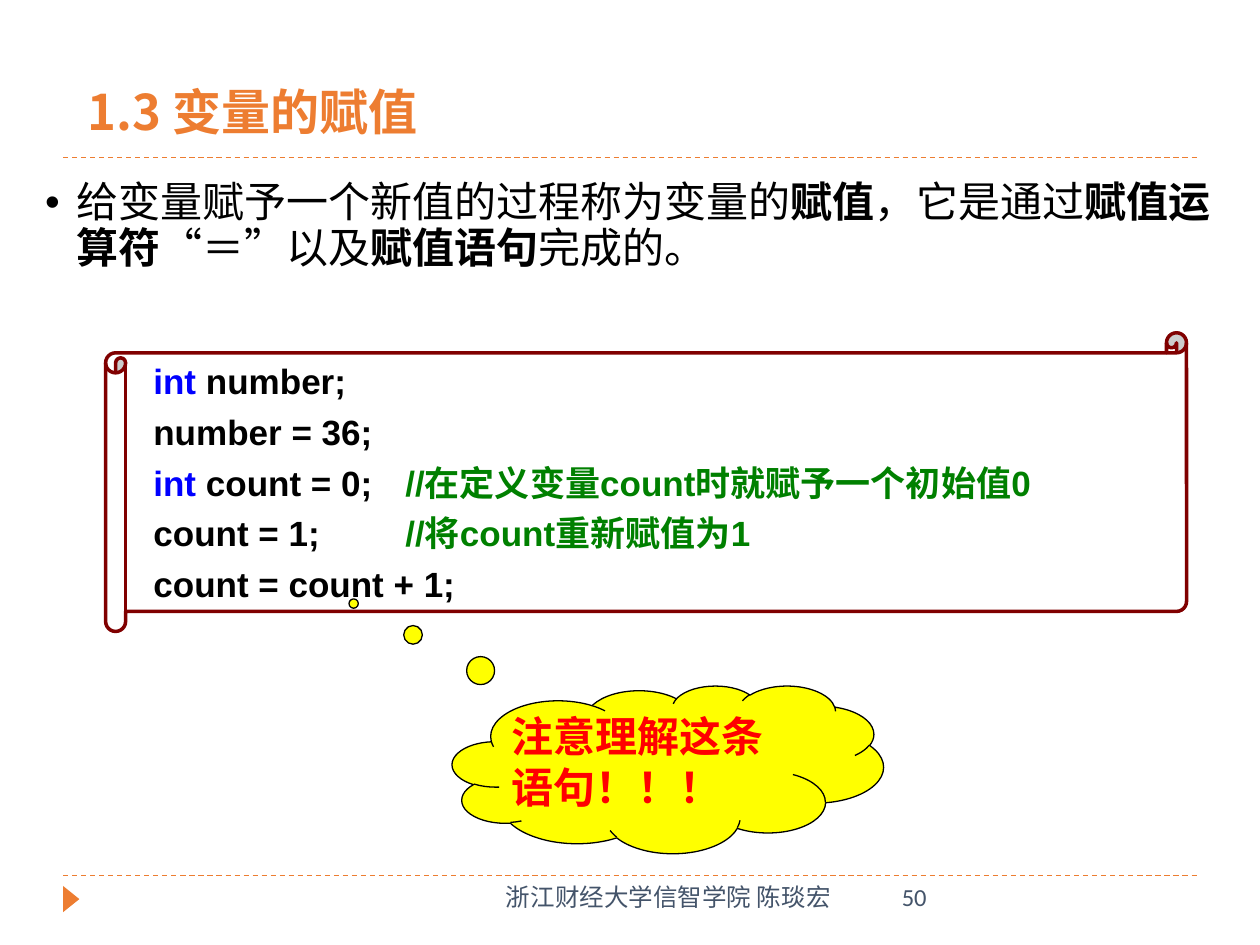
from lxml import etree
from pptx import Presentation
from pptx.dml.color import RGBColor
from pptx.enum.dml import MSO_LINE
from pptx.enum.lang import MSO_LANGUAGE_ID
from pptx.enum.shapes import MSO_CONNECTOR, MSO_SHAPE
from pptx.enum.text import MSO_ANCHOR, PP_ALIGN
from pptx.oxml.ns import qn
from pptx.util import Cm, Pt

STRAIGHT = MSO_CONNECTOR.STRAIGHT
SCROLL, CLOUD = MSO_SHAPE.HORIZONTAL_SCROLL, MSO_SHAPE.CLOUD_CALLOUT
TRIANGLE = MSO_SHAPE.ISOSCELES_TRIANGLE
TOP, MIDDLE, BOTTOM = MSO_ANCHOR.TOP, MSO_ANCHOR.MIDDLE, MSO_ANCHOR.BOTTOM
LEFT, RIGHT = PP_ALIGN.LEFT, PP_ALIGN.RIGHT
DASH = MSO_LINE.DASH
CHINESE = MSO_LANGUAGE_ID.SIMPLIFIED_CHINESE

ORANGE = RGBColor(0xED, 0x7D, 0x31)
SLATE = RGBColor(0x44, 0x54, 0x6A)
BLACK = RGBColor(0, 0, 0)
WHITE = RGBColor(0xFF, 0xFF, 0xFF)
MAROON = RGBColor(0x80, 0, 0)
BLUE = RGBColor(0, 0, 0xFF)
GREEN = RGBColor(0, 0x80, 0)
YELLOW = RGBColor(0xFF, 0xFF, 0)
RED = RGBColor(0xFF, 0, 0)


def add_run(paragraph, text, **formats):
    run = paragraph.add_run()
    run.text = text
    run.font.language_id = CHINESE
    color = formats.pop("color")
    for name, value in formats.items():
        setattr(run.font, name, value)
    run.font.color.rgb = color


def set_frame(shape, anchor, left=0.25, top=0.13, right=0.25, bottom=0.13):
    frame = shape.text_frame
    formats = {"word_wrap": True, "vertical_anchor": anchor,
               "margin_left": Cm(left), "margin_top": Cm(top),
               "margin_right": Cm(right), "margin_bottom": Cm(bottom)}
    for name, value in formats.items():
        setattr(frame, name, value)
    return frame.paragraphs[0]


presentation = Presentation()
presentation.slide_width, presentation.slide_height = Cm(25.4), Cm(19.05)
slide = presentation.slides.add_slide(presentation.slide_layouts[1])
shapes = slide.shapes

# Dashed rules above and below the content
for y in (17.65, 3.18):
    rule = shapes.add_connector(STRAIGHT, Cm(1.27), Cm(y), Cm(24.13), Cm(y))
    rule.line.color.rgb = ORANGE
    rule.line.width = Pt(0.75)
    rule.line.dash_style = DASH
    etree.SubElement(rule._element.spPr, qn("a:effectLst"))

# Footer marker
marker = shapes.add_shape(TRIANGLE, Cm(1.17), Cm(17.96), Cm(0.53), Cm(0.33))
marker.rotation = 90
marker.shadow.inherit = False
marker.fill.solid()
marker.fill.fore_color.rgb = ORANGE
marker.line.fill.background()

# Title
title = shapes.title
title.left, title.top, title.width, title.height = Cm(1.52), Cm(1.7), Cm(23.06), Cm(1.27)
paragraph = set_frame(title, BOTTOM)
paragraph.alignment = LEFT
paragraph.line_spacing = 0.9
add_run(paragraph, "1.3 变量的赋值", name="Noto Sans CJK SC", size=Pt(28), bold=True, color=ORANGE)

# Definition with its key terms in bold
body = slide.placeholders[1]
body.left, body.top, body.width, body.height = Cm(0.66), Cm(3.53), Cm(24.08), Cm(3.18)
paragraph = set_frame(body, TOP)
paragraph.line_spacing = 0.9
paragraph.space_before = Pt(0)
properties = paragraph._p.get_or_add_pPr()
properties.set("marL", str(Cm(0.64)))
properties.set("indent", str(Cm(-0.64)))
etree.SubElement(properties, qn("a:buFont"), typeface="Arial")
etree.SubElement(properties, qn("a:buChar"), char="•")
definition = ["给变量赋予一个新值的过程称为变量的", "赋值", "，它是通过", "赋值运算符",
              "“＝”以及", "赋值语句", "完成的。"]
for index, text in enumerate(definition):
    add_run(paragraph, text, name="Calibri", size=Pt(24), bold=index % 2 == 1, color=BLACK)

# Code scroll and thought cloud
callouts = []
for kind, box, adjustments, fill, line, width in [
    (SCROLL, (2.13, 6.71, 21.79, 6.02), [0.067], WHITE, MAROON, 2),
    (CLOUD, (9.12, 13.82, 8.69, 3.38), [-0.729, -0.989], YELLOW, BLACK, 0.75),
]:
    shape = shapes.add_shape(kind, *map(Cm, box))
    for index, value in enumerate(adjustments):
        shape.adjustments[index] = value
    shape.shadow.inherit = False
    shape.fill.solid()
    shape.fill.fore_color.rgb = fill
    shape.line.color.rgb = line
    shape.line.width = Pt(width)
    callouts.append(shape)
scroll, cloud = callouts

# Code lines, with comments lined up at a tab stop
code = [
    [("int", BLUE), (" number;", BLACK)],
    [("number = 36;", BLACK)],
    [("int", BLUE), (" count = 0;\t", BLACK), ("//在定义变量count时就赋予一个初始值0", GREEN)],
    [("count = 1;\t", BLACK), ("//将count重新赋值为1", GREEN)],
    [("count = count + 1;", BLACK)],
]
paragraph = set_frame(scroll, MIDDLE, left=0.56)
for index, parts in enumerate(code):
    if index:
        paragraph = scroll.text_frame.add_paragraph()
    paragraph.alignment = LEFT
    paragraph.space_before = Pt(5 if index else 0)
    tabs = etree.SubElement(paragraph._p.get_or_add_pPr(), qn("a:tabLst"))
    etree.SubElement(tabs, qn("a:tab"), pos=str(Cm(5.08)), algn="l")
    for text, color in parts:
        add_run(paragraph, text, name="Arial", size=Pt(20), bold=True, color=color)

# Reminder in the cloud
paragraph = set_frame(cloud, TOP, 0, 0, 0, 0)
paragraph.alignment = LEFT
add_run(paragraph, "注意理解这条语句！！！", name="Arial", size=Pt(24), bold=True, color=RED)

# Footer and page number
for text, left, width, alignment in [("浙江财经大学信智学院 陈琰宏", 8.41, 8.59, RIGHT),
                                     ("50", 17.93, 5.72, LEFT)]:
    box = shapes.add_textbox(Cm(left), Cm(17.65), Cm(width), Cm(1.02))
    paragraph = set_frame(box, TOP)
    paragraph.alignment = alignment
    add_run(paragraph, text, name="Calibri", size=Pt(14), color=SLATE)

presentation.save("out.pptx")
